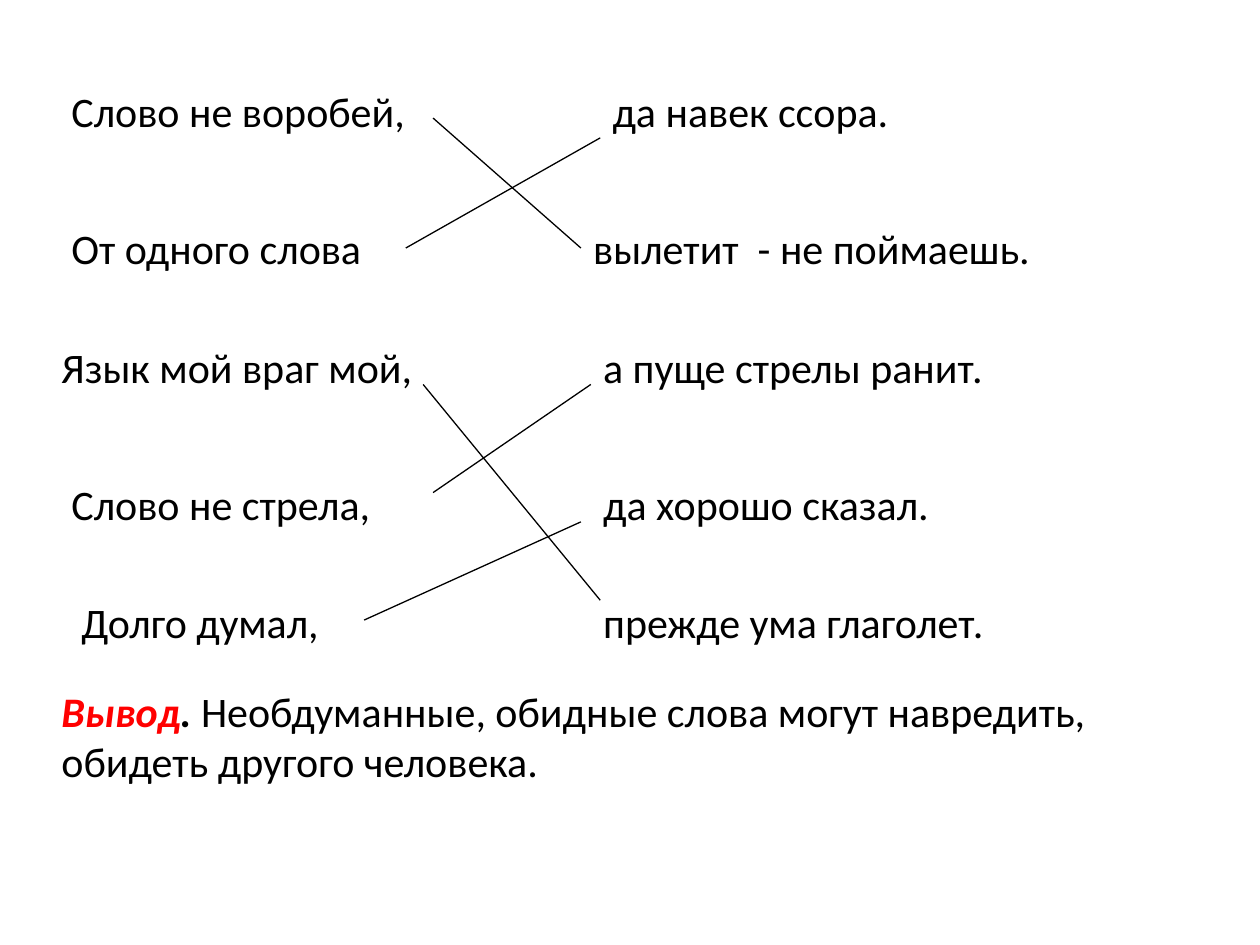
from lxml.etree import SubElement
from pptx import Presentation
from pptx.dml.color import RGBColor
from pptx.enum.shapes import MSO_CONNECTOR
from pptx.enum.text import MSO_AUTO_SIZE
from pptx.oxml.ns import qn
from pptx.util import Cm, Pt


def paint(target, color):
    target.rgb = RGBColor.from_string(color)


def write(para, text, font="Calibri", size=24, color="000000", bold=False, slant=False):
    run = para.add_run()
    run.text = text
    run.font.name = font
    run.font.size = Pt(size)
    run.font.bold = bold
    run.font.italic = slant
    paint(run.font.color, color)


class Page:
    ink = "000000"
    accent = "FF0000"
    weight = 0.75

    def __init__(self, slide):
        self.slide = slide

    def text(self, left, top, width, height, parts, wrap=True):
        box = self.slide.shapes.add_textbox(Cm(left), Cm(top), Cm(width), Cm(height))
        frame = box.text_frame
        frame.word_wrap = wrap
        frame.auto_size = MSO_AUTO_SIZE.SHAPE_TO_FIT_TEXT
        for words, style in parts:
            write(frame.paragraphs[0], words, **{"color": self.ink, **style})

    def line(self, *ends):
        link = self.slide.shapes.add_connector(MSO_CONNECTOR.STRAIGHT, *map(Cm, ends))
        link.line.width = Pt(self.weight)
        paint(link.line.color, self.ink)
        SubElement(link._element.spPr, qn("a:effectLst"))


def main():
    deck = Presentation()
    deck.slide_width, deck.slide_height = Cm(25.4), Cm(19.05)
    page = Page(deck.slides.add_slide(deck.slide_layouts[6]))

    rows = [
        (1.59, (1.19, 7.29, "Слово не воробей,", False), (12.1, 8.33, "да навек ссора.", True)),
        (4.37, (1.19, 6.99, "От одного слова", True), (11.71, 10.01, "вылетит  - не поймаешь.", True)),
        (6.75, (0.99, 9.32, "Язык мой враг мой,", True), (11.91, 8.23, "а пуще стрелы ранит.", True)),
        (9.53, (1.19, 6.6, "Слово не стрела,", False), (11.91, 7.14, "да хорошо сказал.", True)),
        (11.91, (1.39, 5.33, "Долго думал,", False), (11.91, 8.46, "прежде ума глаголет.", True)),
    ]
    for top, *halves in rows:
        for left, width, words, wrap in halves:
            page.text(left, top, width, 1.28, [(words, {})], wrap)

    links = [
        (8.73, 2.38, 11.71, 5),
        (8.18, 5, 12.1, 2.78),
        (8.53, 7.75, 12.1, 12.1),
        (8.73, 9.93, 11.91, 7.75),
        (7.34, 12.5, 11.71, 10.52),
    ]
    for ends in links:
        page.line(*ends)

    strong = {"bold": True, "slant": True}
    page.text(0.99, 13.69, 23.42, 2.31, [
        ("Вывод", {**strong, "color": page.accent}),
        (". ", strong),
        ("Необдуманные, обидные слова могут навредить, обидеть другого человека.", {}),
    ])
    deck.save("out.pptx")


if __name__ == "__main__":
    main()
